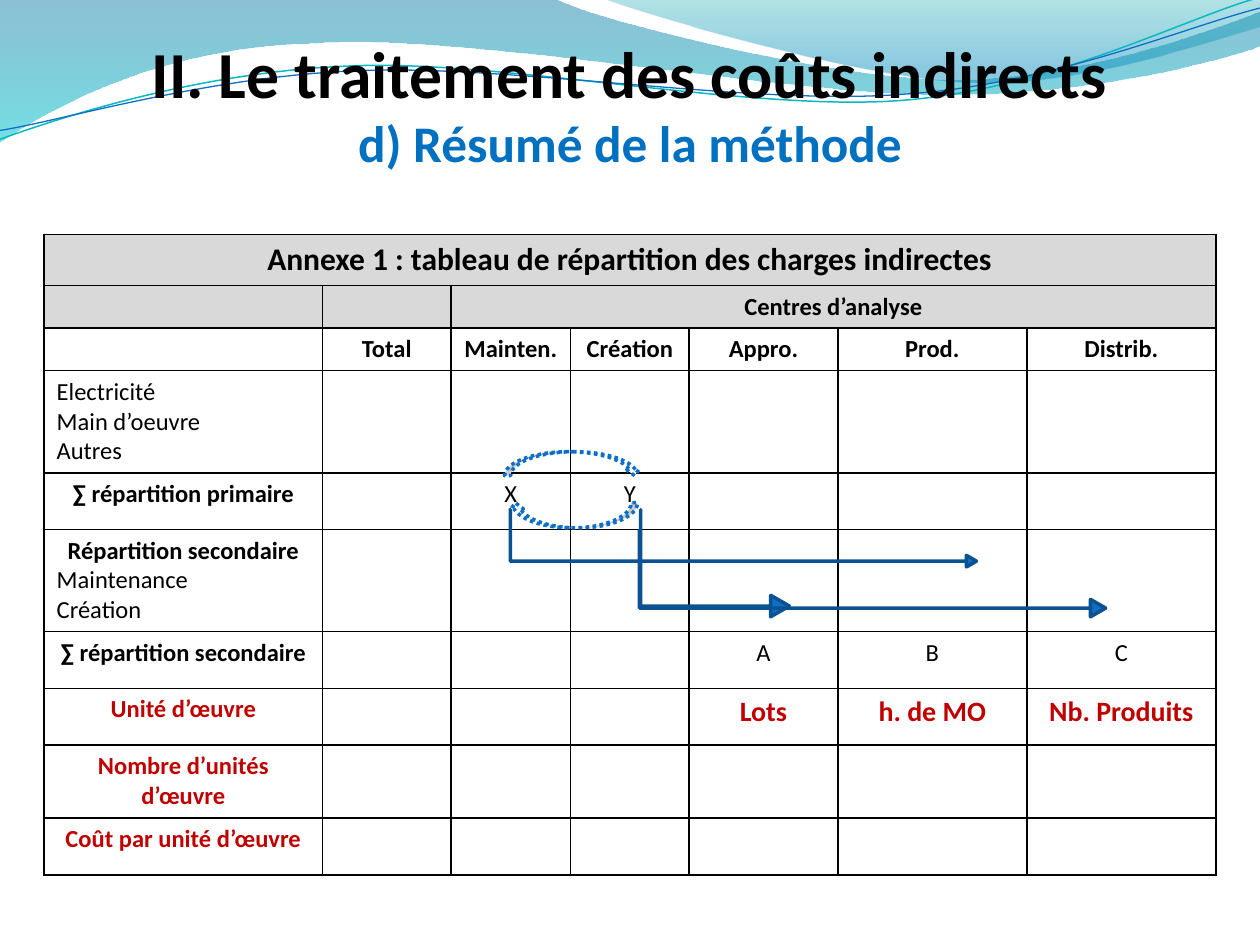
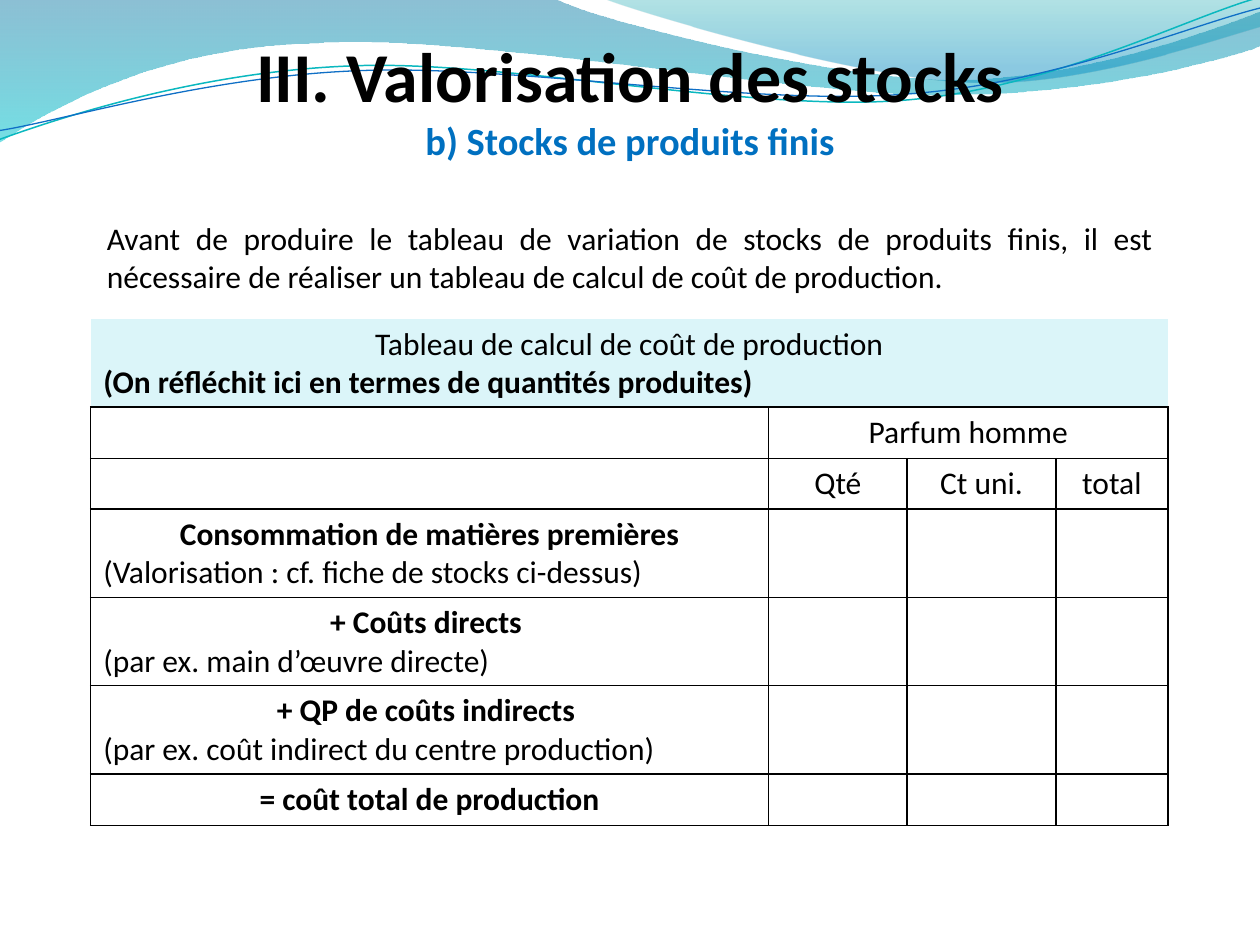
"""Build two cost-accounting slides: indirect cost allocation and production cost."""
from dataclasses import dataclass

from lxml.etree import SubElement as Sub
from pptx import Presentation
from pptx.dml.color import RGBColor as RGB
from pptx.enum.dml import MSO_LINE as Dash
from pptx.enum.shapes import MSO_SHAPE as Form
from pptx.enum.text import PP_ALIGN as Align
from pptx.oxml import parse_xml
from pptx.oxml.ns import nsdecls, qn
from pptx.util import Inches as In, Pt


@dataclass(frozen=True)
class Theme:
    font: str = "Calibri"
    ink: str = "000000"
    paper: str = "FFFFFF"
    accent: str = "0070C0"
    alert: str = "C00000"
    grey: str = "D9D9D9"
    pale: str = "DBF5F9"
    blue: str = "0F6FC6"
    navy: str = "0B5292"
    teal: str = "0AB8BF"
    small: float = 14
    mid: float = 16
    body: float = 18


look = Theme()
mid, left, full = Align.CENTER, Align.LEFT, Align.JUSTIFY
styles = {
    "text": (look.small, False, look.ink, left),
    "value": (look.small, False, look.ink, mid),
    "label": (look.small, True, look.ink, mid),
    "unit": (look.small, True, look.alert, mid),
    "base": (look.mid, True, look.alert, mid),
    "head": (look.body, True, look.ink, mid),
    "plain": (look.body, False, look.ink, mid),
    "note": (look.body, False, look.ink, left),
    "strong": (look.body, True, look.ink, left),
    "para": (look.body, False, look.ink, full),
    "title1": (37.5, True, look.ink, mid),
    "sub1": (29.25, True, look.accent, mid),
    "title2": (40, True, look.ink, mid),
    "sub2": (22, True, look.accent, mid),
}


def write(frame, lines):
    frame.word_wrap = True
    for i, (text, style) in enumerate(lines):
        par = frame.add_paragraph() if i else frame.paragraphs[0]
        size, bold, tint, par.alignment = styles[style]
        run = par.add_run()
        run.text = text
        form = {"size": Pt(size), "bold": bold, "name": look.font}
        for key, value in form.items():
            setattr(run.font, key, value)
        run.font.color.rgb = RGB.from_string(tint)


def grid(slide, top, cols, rows, spans, cells, fills, framed, size):
    box = slide.shapes.add_table(len(rows), len(cols), In(0.35), In(top), In(sum(cols)), In(sum(rows)))
    table = box.table
    table.first_row = table.horz_banding = False
    for col, width in zip(table.columns, cols):
        col.width = In(width)
    for row, height in zip(table.rows, rows):
        row.height = In(height)
    for r, c, last in spans:
        table.cell(r, c).merge(table.cell(r, last))
    for r in range(len(rows)):
        for c in range(len(cols)):
            cell = table.cell(r, c)
            if (r, c) in fills:
                cell.fill.solid()
                cell.fill.fore_color.rgb = RGB.from_string(fills[r, c])
            else:
                cell.fill.background()
            if (r, c) in cells:
                write(cell.text_frame, cells[r, c])
            else:
                end = cell.text_frame.paragraphs[0]._p.get_or_add_endParaRPr()
                end.set("sz", str(size * 100))
            sides = {"L": (r, c - 1), "R": (r, c + 1), "T": (r - 1, c), "B": (r + 1, c)}
            for i, (side, near) in enumerate(sides.items()):
                drawn = (r, c) in framed or near in framed
                paint = f'<a:solidFill><a:srgbClr val="{look.ink}"/></a:solidFill>' if drawn else "<a:noFill/>"
                edge = parse_xml(f'<a:ln{side} {nsdecls("a")} w="12700">{paint}</a:ln{side}>')
                cell._tc.get_or_add_tcPr().insert(i, edge)


bands = [
    ((0, 0), [(4.4, -0.01), (4.76, 0.17, 6.64, 0.63, 7.58, 0.63), (8.53, 0.63, 9.58, 0.26, 10, 0.09),
              (10.01, 0.36), (9.83, 0.44, 8.7, 0.76, 7.46, 0.75), (6.22, 0.75, 3.82, 0.28, 2.57, 0.34),
              (1.29, 0.36, 0.46, 0.83, -0.01, 1.13), (0, 0)],
     [(0, "0074A1", 45), (1, "00C6CF", 55)], None),
    ((4.79, -0.01), [(5.09, 0.11, 6.82, 0.62, 7.69, 0.65), (8.56, 0.69, 9.61, 0.32, 10, 0.21),
                     (10, 0), (4.79, -0.01)],
     [(0, "00A1A9", 30), (0.8, "008BBF", 45)], None),
    ((-0.02, 0.87), [(0.47, 0.72, 1.58, 0.41, 2.78, 0.42), (3.96, 0.42, 5.91, 0.93, 7.12, 0.9),
                     (8.32, 0.87, 9.4, 0.36, 10, 0.22)], None, (look.teal, 0.85)),
    ((-0.02, 0.8), [(0.46, 0.75, 1.64, 0.45, 2.83, 0.46), (4.03, 0.46, 5.96, 0.89, 7.16, 0.85),
                    (8.35, 0.83, 9.42, 0.42, 10.02, 0.3)], None, (look.blue, 0.75)),
]
titles = [
    (1.01, [("II. Le traitement des coûts indirects", "title1"), ("d) Résumé de la méthode", "sub1")]),
    (1.17, [("III. Valorisation des stocks", "title2"), ("b) Stocks de produits finis", "sub2")]),
]

deck = Presentation()
deck.slide_width, deck.slide_height = In(10), In(7.5)
pages = []
for height, lines in titles:
    slide = deck.slides.add_slide(deck.slide_layouts[6])
    pages.append(slide)
    for start, legs, stops, stroke in bands:
        pen = slide.shapes.build_freeform(In(start[0]), In(start[1]), 1.0)
        pen.add_line_segments([(In(leg[-2]), In(leg[-1])) for leg in legs], close=bool(stops))
        wave = pen.convert_to_shape()
        wave.shadow.inherit = False
        for part, leg in zip(list(wave._element.iter(qn("a:lnTo"))), legs):
            if len(leg) == 6:
                part.tag = qn("a:cubicBezTo")
                part.remove(part[0])
                for x, y in zip(leg[::2], leg[1::2]):
                    dot = Sub(part, qn("a:pt"))
                    dot.set("x", str(In(x) - wave.left))
                    dot.set("y", str(In(y) - wave.top))
        if stops:
            wave.line.fill.background()
            wave.fill.gradient()
            wave.fill.gradient_angle = 270
            for stop, (place, tint, alpha) in zip(wave.fill.gradient_stops, stops):
                stop.position = place
                stop.color.rgb = RGB.from_string(tint)
                Sub(stop._gs[0], qn("a:alpha")).set("val", str(alpha * 1000))
        else:
            wave.rotation = 357.3
            wave.fill.background()
            wave.line.color.rgb = RGB.from_string(stroke[0])
            wave.line.width = Pt(stroke[1])

method, stock = pages

cells = {
    (0, 0): [("Annexe 1 : tableau de répartition des charges indirectes", "head")],
    (1, 2): [("Centres d’analyse", "label")],
    (3, 0): [(name, "text") for name in ("Electricité", "Main d’oeuvre", "Autres")],
    (4, 0): [("∑ répartition primaire", "label")],
    (5, 0): [("Répartition secondaire", "label"), ("Maintenance", "text"), ("Création", "text")],
    (6, 0): [("∑ répartition secondaire", "label")],
    (7, 0): [("Unité d’œuvre", "unit")],
    (8, 0): [("Nombre d’unités d’œuvre", "unit")],
    (9, 0): [("Coût par unité d’œuvre", "unit")],
}
for r, c, style, names in [
    (2, 1, "label", ["Total", "Mainten.", "Création", "Appro.", "Prod.", "Distrib."]),
    (4, 2, "value", ["X", "Y"]),
    (6, 4, "value", ["A", "B", "C"]),
    (7, 4, "base", ["Lots", "h. de MO", "Nb. Produits"]),
]:
    for i, name in enumerate(names):
        cells[r, c + i] = [(name, style)]
grid(method, 1.86, [2.21, 1.02, 0.95, 0.94, 1.18, 1.5, 1.5],
     [0.4, 0.33, 0.34, 0.81, 0.45, 0.81, 0.45, 0.45, 0.58, 0.45],
     [(0, 0, 6), (1, 2, 6)], cells,
     {(r, c): look.grey for r in range(2) for c in range(7)},
     {(r, c) for r in range(10) for c in range(7)}, look.small)

bend, curl = Form.BENT_UP_ARROW, Form.CURVED_LEFT_ARROW
for form, x, y, w, h, turn in [
    (bend, 5.25, 3.88, 0.85, 1.18, 90),
    (bend, 6.58, 2.7, 0.69, 3.7, 90),
    (bend, 5.67, 2.42, 0.46, 3.7, 90),
    (curl, 4.45, 3.58, 0.2, 1.02, 90),
    (curl, 4.45, 3.14, 0.19, 1.08, 270),
]:
    arrow = method.shapes.add_shape(form, In(x), In(y), In(w), In(h))
    arrow.rotation = turn
    arrow.shadow.inherit = False
    fill, edge = (look.blue, look.navy) if form == bend else (look.paper, look.blue)
    arrow.fill.solid()
    arrow.fill.fore_color.rgb = RGB.from_string(fill)
    arrow.line.color.rgb = RGB.from_string(edge)
    arrow.line.width = Pt(2)
    if form == bend:
        for i, value in enumerate((0, 0.1, 0.175)):
            arrow.adjustments[i] = value
    else:
        arrow.line.dash_style = Dash.ROUND_DOT

for slide, (height, lines) in zip(pages, titles):
    write(slide.shapes.add_textbox(In(0.5), In(0.21), In(9), In(height)).text_frame, lines)

intro = ("Avant de produire le tableau de variation de stocks de produits finis, "
         "il est nécessaire de réaliser un tableau de calcul de coût de production.")
write(stock.shapes.add_textbox(In(0.75), In(1.69), In(8.5), In(0.71)).text_frame, [(intro, "para")])

cells = {
    (0, 1): [("Tableau de calcul de coût de production", "plain"),
             ("(On réfléchit ici en termes de quantités produites)", "strong")],
    (1, 2): [("Parfum homme", "plain")],
    (3, 1): [("Consommation de matières premières", "head"),
             ("(Valorisation : cf. fiche de stocks ci-dessus)", "note")],
    (4, 1): [("+ Coûts directs ", "head"), ("(par ex. main d’œuvre directe)", "note")],
    (5, 1): [("+ QP de coûts indirects ", "head"),
             ("(par ex. coût indirect du centre production)", "note")],
    (6, 1): [("= coût total de production", "head")],
}
for c, name in enumerate(["Qté", "Ct uni.", "total"], 2):
    cells[2, c] = [(name, "plain")]
grid(stock, 2.53, [0.37, 5.38, 1.1, 1.18, 0.89, 0.37],
     [0.7, 0.41, 0.4, 0.7, 0.7, 0.7, 0.41, 0.41],
     [(0, 1, 4), (1, 2, 4)], cells, {(0, c): look.pale for c in range(1, 5)},
     {(r, c) for r in range(1, 7) for c in range(1, 5)}, look.body)

deck.save("out.pptx")
